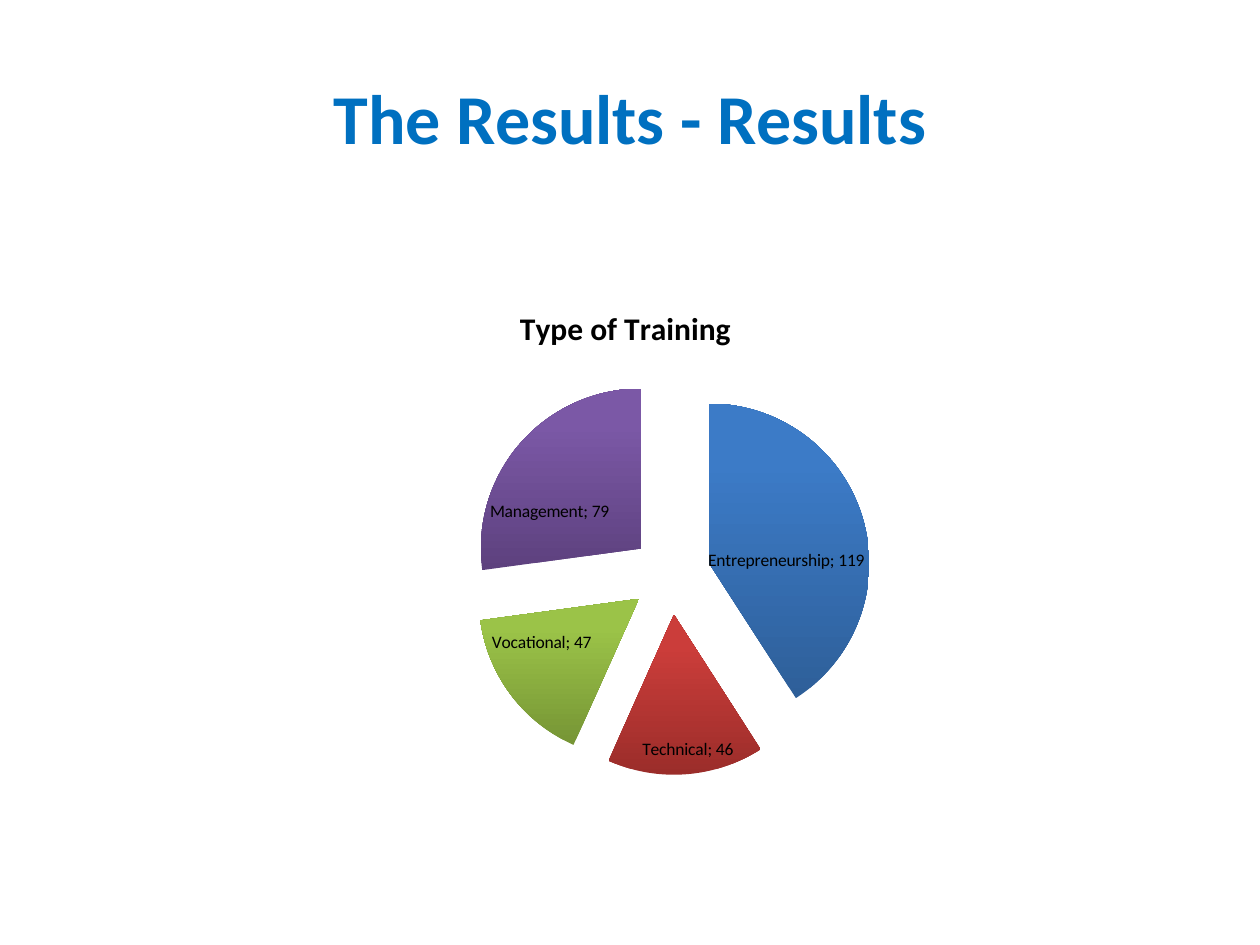
from dataclasses import dataclass

import pptx
import pptx.chart.chart
import pptx.chart.data
import pptx.chart.series
import pptx.dml.color
import pptx.enum.chart
import pptx.enum.text
import pptx.oxml
import pptx.oxml.ns
import pptx.util

RGBColor = pptx.dml.color.RGBColor

PX = pptx.util.Inches(1) // 126
FONT = "Calibri"
TITLE_BLUE = RGBColor(0x00, 0x70, 0xC0)
BLACK = RGBColor(0x00, 0x00, 0x00)
BLUE, BLUE_DARK = RGBColor(0x3C, 0x7B, 0xC7), RGBColor(0x2E, 0x5F, 0x99)
RED, RED_DARK = RGBColor(0xCB, 0x3D, 0x3A), RGBColor(0x9B, 0x2D, 0x2A)
GREEN, GREEN_DARK = RGBColor(0x9B, 0xC3, 0x48), RGBColor(0x76, 0x95, 0x35)
PURPLE, PURPLE_DARK = RGBColor(0x7B, 0x58, 0xA6), RGBColor(0x5D, 0x41, 0x7E)


@dataclass(frozen=True)
class Box:
    left: int
    top: int
    width: int
    height: int

    def emu(self) -> tuple[int, int, int, int]:
        return self.left * PX, self.top * PX, self.width * PX, self.height * PX


@dataclass(frozen=True)
class Training:
    name: str
    count: int
    light: RGBColor
    dark: RGBColor


HEADING_BOX = Box(63, 38, 1134, 157)
CHART_BOX = Box(184, 283, 883, 537)
PIE_BOX = Box(471, 375, 400, 400)
TRAININGS = [
    Training("Entrepreneurship", 119, BLUE, BLUE_DARK),
    Training("Technical", 46, RED, RED_DARK),
    Training("Vocational", 47, GREEN, GREEN_DARK),
    Training("Management", 79, PURPLE, PURPLE_DARK),
]


def chart_xml(tag: str, content: str):
    return pptx.oxml.parse_xml(
        f"<c:{tag} {pptx.oxml.ns.nsdecls('c')}>{content}</c:{tag}>"
    )


def place_pie(chart: pptx.chart.chart.Chart, frame: Box, pie: Box) -> None:
    fractions = {
        "x": (pie.left - frame.left) / frame.width,
        "y": (pie.top - frame.top) / frame.height,
        "w": pie.width / frame.width,
        "h": pie.height / frame.height,
    }
    modes = '<c:layoutTarget val="inner"/><c:xMode val="edge"/><c:yMode val="edge"/>'
    sizes = "".join(f'<c:{key} val="{value}"/>' for key, value in fractions.items())
    plot_area = chart._chartSpace.chart.plotArea
    for layout in plot_area.findall(pptx.oxml.ns.qn("c:layout")):
        plot_area.remove(layout)
    plot_area.insert(
        0, chart_xml("layout", f"<c:manualLayout>{modes}{sizes}</c:manualLayout>")
    )


def explode(series: pptx.chart.series.PieSeries, percent: int) -> None:
    explosion = chart_xml("explosion", "")
    explosion.set("val", str(percent))
    series._element.find(pptx.oxml.ns.qn("c:tx")).addnext(explosion)


def paint_slice(series: pptx.chart.series.PieSeries, index: int, training: Training) -> None:
    fill = series.points[index].format.fill
    fill.gradient()
    fill.gradient_angle = 90
    bottom, top = fill.gradient_stops
    bottom.color.rgb, bottom.position = training.dark, 0
    top.color.rgb, top.position = training.light, 0.8


def label_slices(chart: pptx.chart.chart.Chart) -> None:
    plot = chart.plots[0]
    plot.has_data_labels = True
    labels = plot.data_labels
    labels.show_value = True
    labels.show_category_name = True
    labels.show_percentage = False
    labels.position = pptx.enum.chart.XL_LABEL_POSITION.BEST_FIT
    labels.font.name = FONT
    labels.font.size = pptx.util.Pt(10)
    labels.font.color.rgb = BLACK
    last_flag = labels._element.find(pptx.oxml.ns.qn("c:showBubbleSize"))
    if last_flag is None:
        last_flag = labels._element.find(pptx.oxml.ns.qn("c:showPercent"))
    last_flag.addnext(chart_xml("separator", "; "))


def add_training_chart(slide) -> None:
    data = pptx.chart.data.CategoryChartData()
    data.categories = [training.name for training in TRAININGS]
    data.add_series("Series 1", [training.count for training in TRAININGS])
    chart = slide.shapes.add_chart(
        pptx.enum.chart.XL_CHART_TYPE.PIE, *CHART_BOX.emu(), data
    ).chart
    chart.has_legend = False
    chart.font.name = FONT
    chart.font.size = pptx.util.Pt(10)
    chart.font.color.rgb = BLACK

    chart.has_title = True
    caption = chart.chart_title.text_frame.paragraphs[0]
    caption.text = "Type of Training"
    caption.font.name = FONT
    caption.font.size = pptx.util.Pt(18)
    caption.font.bold = True
    caption.font.color.rgb = BLACK
    chart.chart_title.include_in_layout = False

    place_pie(chart, CHART_BOX, PIE_BOX)
    chart.plots[0].vary_by_categories = True
    counts = chart.plots[0].series[0]
    explode(counts, 25)
    for index, training in enumerate(TRAININGS):
        paint_slice(counts, index, training)
    label_slices(chart)


def add_heading(slide) -> None:
    heading = slide.shapes.title
    heading.left, heading.top, heading.width, heading.height = HEADING_BOX.emu()
    heading.text_frame.vertical_anchor = pptx.enum.text.MSO_ANCHOR.MIDDLE
    line = heading.text_frame.paragraphs[0]
    line.text = "The Results - Results"
    line.alignment = pptx.enum.text.PP_ALIGN.CENTER
    line.font.name = FONT
    line.font.size = pptx.util.Pt(40)
    line.font.bold = True
    line.font.color.rgb = TITLE_BLUE


def main() -> None:
    deck = pptx.Presentation()
    deck.slide_width = pptx.util.Inches(10)
    deck.slide_height = pptx.util.Inches(7.5)
    slide = deck.slides.add_slide(deck.slide_layouts[5])
    add_heading(slide)
    add_training_chart(slide)
    deck.save("out.pptx")


if __name__ == "__main__":
    main()
